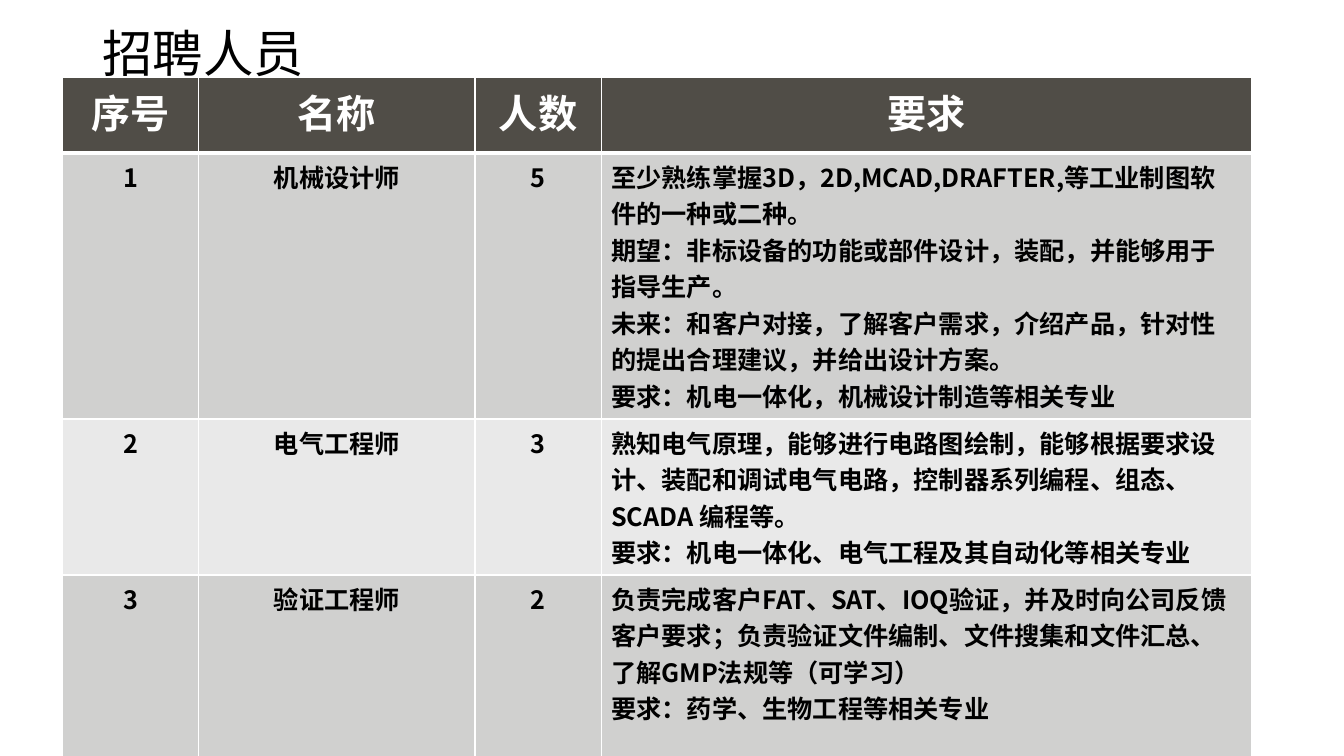
from lxml.etree import SubElement
from pptx import Presentation
from pptx.dml.color import RGBColor
from pptx.enum.text import MSO_ANCHOR, PP_ALIGN
from pptx.oxml.ns import qn
from pptx.util import Cm, Pt

FONT = "Noto Sans CJK SC"
BLACK = RGBColor(0x00, 0x00, 0x00)
WHITE = RGBColor(0xFF, 0xFF, 0xFF)
HEADER = RGBColor(0x50, 0x4D, 0x47)
BAND_DARK = RGBColor(0xD0, 0xD0, 0xCF)
BAND_LIGHT = RGBColor(0xE9, 0xE9, 0xE9)

COL_WIDTHS = [3.44, 6.96, 3.18, 16.38]
ROW_HEIGHTS = [1.9, 6.7, 3.93, 4.7]
JOBS = [
    ["序号", "名称", "人数", "要求"],
    ["1", "机械设计师", "5",
     "至少熟练掌握3D，2D,MCAD,DRAFTER,等工业制图软件的一种或二种。\n"
     "期望：非标设备的功能或部件设计，装配，并能够用于指导生产。\n"
     "未来：和客户对接，了解客户需求，介绍产品，针对性的提出合理建议，并给出设计方案。\n"
     "要求：机电一体化，机械设计制造等相关专业"],
    ["2", "电气工程师", "3",
     "熟知电气原理，能够进行电路图绘制，能够根据要求设计、装配和调试电气电路，控制器系列编程、组态、SCADA 编程等。\n"
     "要求：机电一体化、电气工程及其自动化等相关专业"],
    ["3", "验证工程师", "2",
     "负责完成客户FAT、SAT、IOQ验证，并及时向公司反馈客户要求；负责验证文件编制、文件搜集和文件汇总、了解GMP法规等（可学习）\n"
     "要求：药学、生物工程等相关专业"],
]


def style_paragraph(p, size, color, bold=False):
    p.font.name = FONT
    p.font.size = Pt(size)
    p.font.bold = bold
    p.font.color.rgb = color
    # East Asian typeface follows the Latin one
    latin = p._p.pPr.find(qn("a:defRPr")).find(qn("a:latin"))
    ea = latin.makeelement(qn("a:ea"), {"typeface": FONT})
    latin.addnext(ea)


def set_borders(cell, top, bottom):
    tcPr = cell._tc.get_or_add_tcPr()
    for side, width in (("L", 1), ("R", 1), ("T", top), ("B", bottom)):
        ln = SubElement(tcPr, qn(f"a:ln{side}"), w=str(Pt(width)))
        fill = SubElement(ln, qn("a:solidFill"))
        SubElement(fill, qn("a:srgbClr"), val=str(WHITE))


def add_title(s, left, top, width, height):
    tf = s.shapes.add_textbox(left, top, width, height).text_frame
    tf.word_wrap = True
    tf.vertical_anchor = MSO_ANCHOR.MIDDLE
    p = tf.paragraphs[0]
    p.text = "招聘人员"
    p.line_spacing = 0.9
    style_paragraph(p, 36, BLACK)


def add_jobs_table(s, left, top, width, height):
    table = s.shapes.add_table(len(JOBS), len(COL_WIDTHS),
                               left, top, width, height).table
    for column, w in zip(table.columns, COL_WIDTHS):
        column.width = Cm(w)
    for i, (row, h) in enumerate(zip(table.rows, ROW_HEIGHTS)):
        row.height = Cm(h)
        is_header = i == 0
        fill = HEADER if is_header else BAND_DARK if i % 2 else BAND_LIGHT
        for j, cell in enumerate(row.cells):
            centred = is_header or j < len(COL_WIDTHS) - 1
            # Thick rule between header and body
            set_borders(cell, 3 if i == 1 else 1, 3 if is_header else 1)
            cell.fill.solid()
            cell.fill.fore_color.rgb = fill
            if not centred:
                cell.margin_right = Cm(0.35)
            cell.text = JOBS[i][j]
            for p in cell.text_frame.paragraphs:
                p.alignment = PP_ALIGN.CENTER if centred else PP_ALIGN.LEFT
                style_paragraph(p, 28 if is_header else 18,
                                WHITE if is_header else BLACK, bold=True)


def main():
    prs = Presentation()
    prs.slide_width, prs.slide_height = Cm(33.87), Cm(19.05)
    s = prs.slides.add_slide(prs.slide_layouts[6])
    add_title(s, Cm(2.33), Cm(0.52), Cm(29.21), Cm(1.8))
    add_jobs_table(s, Cm(1.57), Cm(1.96),
                   Cm(sum(COL_WIDTHS)), Cm(sum(ROW_HEIGHTS)))
    prs.save("out.pptx")


if __name__ == "__main__":
    main()
